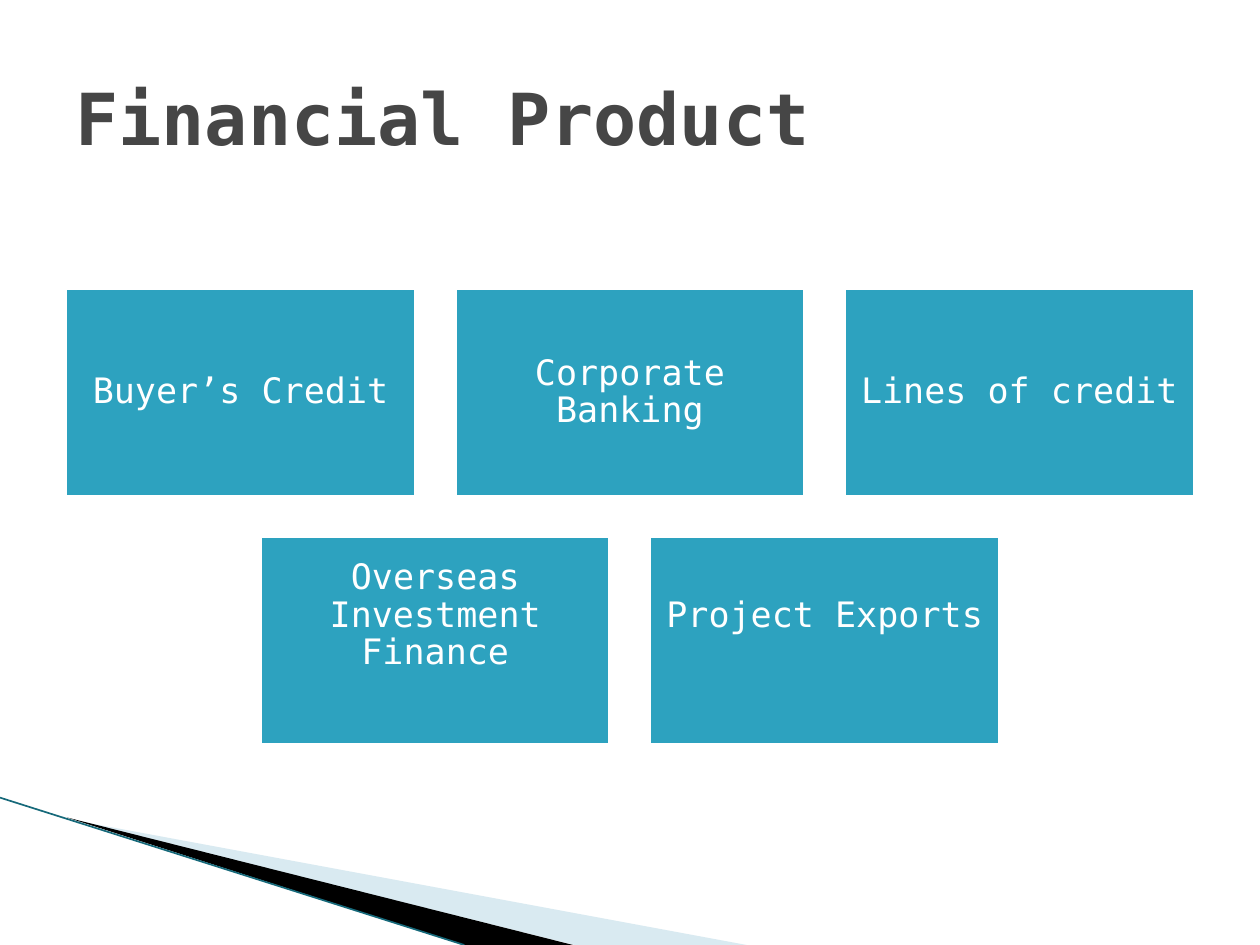
"""Build the Financial Product slide: a title, centred rows of boxes and a corner accent."""
from pptx import Presentation
from pptx.dml.color import RGBColor
from pptx.enum.shapes import MSO_CONNECTOR, MSO_SHAPE
from pptx.enum.text import MSO_ANCHOR, PP_ALIGN
from pptx.oxml.ns import qn
from pptx.util import Cm, Pt
from lxml.etree import SubElement

WHITE = RGBColor(0xFF, 0xFF, 0xFF)
BLACK = RGBColor(0x00, 0x00, 0x00)
GREY = RGBColor(0x46, 0x46, 0x46)
TEAL = RGBColor(0x2D, 0xA2, 0xBF)
DARK_TEAL = RGBColor(0x16, 0x69, 0x7A)
PALE_BLUE = RGBColor(0xA0, 0xCB, 0xDC)

TITLE = "Financial Product"
ROWS = [
    (["Buyer’s Credit", "Corporate Banking", "Lines of credit"], 0.2),
    (["Overseas Investment Finance", "Project Exports"], 1.2),
]
WEDGES = [
    ([(1.4, 16.52), (15.05, 19.05), (11.58, 19.05)], PALE_BLUE, 40),
    ([(1.35, 16.48), (11.55, 19.05), (9.35, 19.05)], BLACK, 100),
]
EDGE = (0, 16.08, 9.36, 19.05)

FONT = "DejaVu Sans Mono"
TITLE_FONT = {"name": FONT, "size": Pt(41), "bold": True}
BOX_FONT = {"name": FONT, "size": Pt(20), "bold": False}
SLIDE_W, SLIDE_H = 25.4, 19.05
BOX_W, BOX_H, GAP, TOP = 7.14, 4.29, 0.71, 5.77


def set_attrs(obj, values):
    for name, value in values.items():
        setattr(obj, name, value)


def write(sp, text, font, color, frame, para):
    tf = sp.text_frame
    set_attrs(tf, {"word_wrap": True, "vertical_anchor": MSO_ANCHOR.MIDDLE, **frame})
    p = tf.paragraphs[0]
    set_attrs(p, para)
    r = p.add_run()
    r.text = text
    set_attrs(r.font, font)
    r.font.color.rgb = color


def add_wedge(s, points, color, opacity):
    start, *rest = [(Cm(x), Cm(y)) for x, y in points]
    builder = s.shapes.build_freeform(*start)
    builder.add_line_segments(rest, close=True)
    sp = builder.convert_to_shape()
    sp.shadow.inherit = False
    sp.fill.solid()
    sp.fill.fore_color.rgb = color
    sp.line.fill.background()
    if opacity < 100:
        clr = sp.fill._xPr.find(qn("a:solidFill"))[0]
        SubElement(clr, qn("a:alpha")).set("val", str(opacity * 1000))


def add_box(s, text, left, top, bottom_inset):
    sp = s.shapes.add_shape(MSO_SHAPE.RECTANGLE, Cm(left), Cm(top), Cm(BOX_W), Cm(BOX_H))
    sp.shadow.inherit = False
    sp.fill.solid()
    sp.fill.fore_color.rgb = TEAL
    sp.line.color.rgb = WHITE
    sp.line.width = Pt(4.33)
    frame = {f"margin_{side}": Cm(0.2) for side in ("left", "right", "top")}
    frame["margin_bottom"] = Cm(bottom_inset)
    write(sp, text, BOX_FONT, WHITE, frame,
          {"alignment": PP_ALIGN.CENTER, "line_spacing": 0.9})


def main():
    prs = Presentation()
    prs.slide_width, prs.slide_height = Cm(SLIDE_W), Cm(SLIDE_H)
    s = prs.slides.add_slide(prs.slide_layouts[6])

    for wedge in WEDGES:
        add_wedge(s, *wedge)
    edge = s.shapes.add_connector(MSO_CONNECTOR.STRAIGHT, *map(Cm, EDGE))
    edge.line.color.rgb = DARK_TEAL
    edge.line.width = Pt(0.95)
    SubElement(edge._element.spPr, qn("a:effectLst"))

    for i, (labels, bottom_inset) in enumerate(ROWS):
        n = len(labels)
        left = (SLIDE_W - n * BOX_W - (n - 1) * GAP) / 2
        for j, label in enumerate(labels):
            add_box(s, label, left + j * (BOX_W + GAP), TOP + i * (BOX_H + GAP), bottom_inset)

    title = s.shapes.add_textbox(Cm(1.27), Cm(0.76), Cm(22.86), Cm(3.18))
    write(title, TITLE, TITLE_FONT, GREY, {}, {"alignment": PP_ALIGN.LEFT})
    prs.save("out.pptx")


if __name__ == "__main__":
    main()
